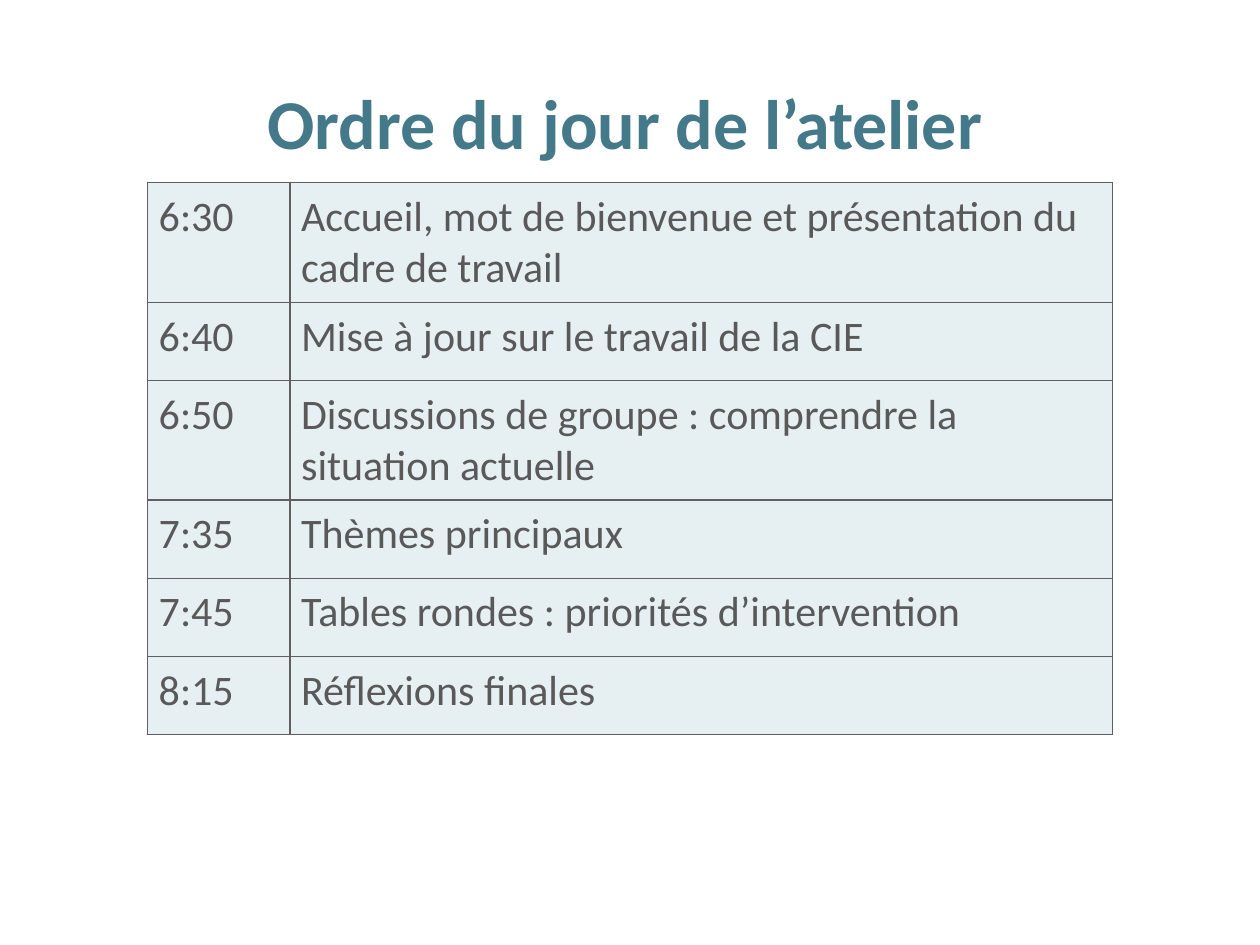
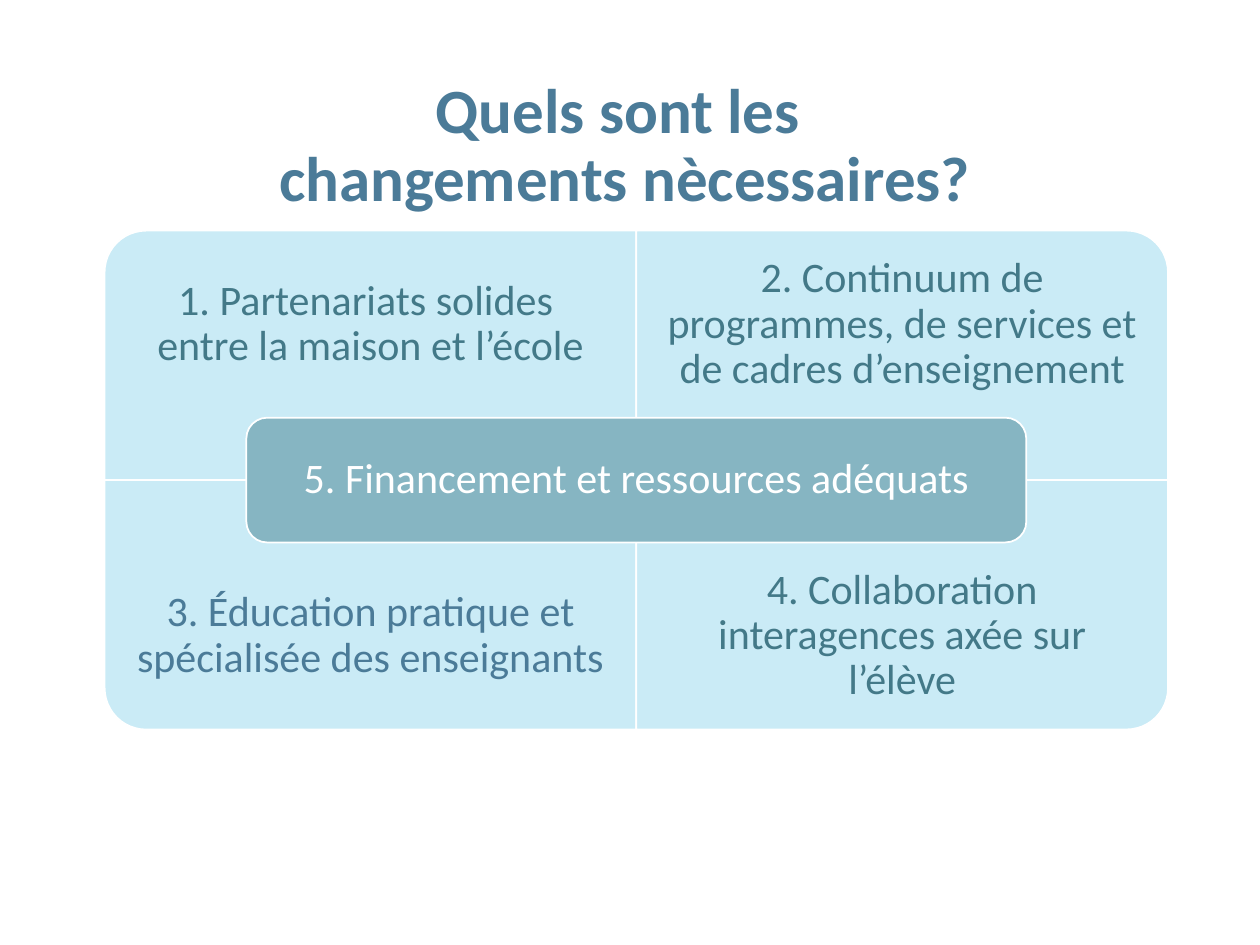
from lxml import etree
from pptx import Presentation
from pptx.dml.color import RGBColor
from pptx.enum.shapes import MSO_SHAPE
from pptx.enum.text import MSO_ANCHOR, PP_ALIGN
from pptx.oxml.ns import qn
from pptx.util import Inches, Pt

CORNER, PILL = MSO_SHAPE.ROUND_1_RECTANGLE, MSO_SHAPE.ROUNDED_RECTANGLE
MIDDLE, CENTER = MSO_ANCHOR.MIDDLE, PP_ALIGN.CENTER

FONT = "Calibri"
SIZE = 24
COLORS = {
    "teal": "437988",
    "blue": "4B7B98",
    "mist": "86B5C2",
    "sky": "A2DCF0",
    "text": "595959",
    "rule": "5F5F5F",
    "white": "FFFFFF",
}

AGENDA = [
    ("6:30", "Accueil, mot de bienvenue et présentation du cadre de travail", 0.95),
    ("6:40", "Mise à jour sur le travail de la CIE", 0.62),
    ("6:50", "Discussions de groupe : comprendre la situation actuelle", 0.95),
    ("7:35", "Thèmes principaux", 0.62),
    ("7:45", "Tables rondes : priorités d’intervention", 0.62),
    ("8:15", "Réflexions finales", 0.62),
]

# Text, colour and turn of each quarter, row by row
QUARTERS = [
    ("1. Partenariats solides \ventre la maison et l’école", "teal", 270),
    ("2. Continuum de programmes, de services et de cadres d’enseignement", "teal", 0),
    ("3. Éducation pratique et spécialisée des enseignants", "blue", 180),
    ("4. Collaboration interagences axée sur l’élève", "teal", 90),
]


def rgb(name):
    return RGBColor.from_string(COLORS[name])


def style(para, size, color, bold=False):
    para.font.name, para.font.size = FONT, Pt(size)
    para.font.bold, para.font.color.rgb = bold, rgb(color)


def paint(fill, color, node=None, alpha=100):
    """Fill solidly; alpha is added to the fill's colour inside node."""
    fill.solid()
    fill.fore_color.rgb = rgb(color)
    if alpha < 100:
        tone = node.find(qn("a:solidFill") + "/" + qn("a:srgbClr"))
        etree.SubElement(tone, qn("a:alpha"), val=str(alpha * 1000))


def write(frame, text, size, color, inset, bold=False):
    frame.word_wrap = True
    frame.vertical_anchor = MIDDLE
    frame.margin_left = frame.margin_right = Inches(inset)
    frame.margin_top = frame.margin_bottom = Inches(inset)
    para = frame.paragraphs[0]
    para.text = text
    para.alignment, para.line_spacing = CENTER, 0.9
    style(para, size, color, bold)


def add_text(slide, box, text, size, color, inset=0.1, bold=False):
    label = slide.shapes.add_textbox(*map(Inches, box))
    write(label.text_frame, text, size, color, inset, bold)


def add_title(slide, text, top, size, color):
    add_text(slide, (0.74, top, 8.44, 1.45), text, size, color, bold=True)


def add_panel(slide, kind, box, color, alpha=100, turn=0):
    left, top, width, height = box
    if turn % 180:  # a quarter turn swaps the sides about the centre
        left, top = left + (width - height) / 2, top + (height - width) / 2
        width, height = height, width
    panel = slide.shapes.add_shape(kind, *map(Inches, (left, top, width, height)))
    panel.shadow.inherit = False
    panel.rotation = turn
    paint(panel.fill, color, panel._element.spPr, alpha)
    panel.line.color.rgb = rgb("white")
    panel.line.width = Pt(1)
    return panel


def add_borders(props):
    for spot, side in enumerate("LRTB"):
        line = etree.Element(qn("a:ln" + side), w=str(Pt(1)))
        fill = etree.SubElement(line, qn("a:solidFill"))
        etree.SubElement(fill, qn("a:srgbClr"), val=COLORS["rule"])
        props.insert(spot, line)


def fill_cell(cell, text):
    props = cell._tc.get_or_add_tcPr()
    paint(cell.fill, "mist", props, 20)
    add_borders(props)
    cell.margin_left = cell.margin_right = Inches(0.09)
    cell.margin_top = cell.margin_bottom = Inches(0.07)
    cell.text = text
    style(cell.text_frame.paragraphs[0], SIZE, "text")


def add_agenda(slide):
    widths = (1.13, 6.53)
    tall = sum(row[2] for row in AGENDA)
    box = map(Inches, (1.17, 1.45, sum(widths), tall))
    table = slide.shapes.add_table(len(AGENDA), len(widths), *box).table
    table.first_row = table.horz_banding = False
    for col, width in zip(table.columns, widths):
        col.width = Inches(width)
    for row, (time, topic, height) in zip(table.rows, AGENDA):
        row.height = Inches(height)
        for cell, text in zip(row.cells, (time, topic)):
            fill_cell(cell, text)


def add_matrix(slide):
    left, top, width, height = 0.83, 1.83, 4.22, 1.98
    depth = 1.49  # text keeps clear of the centre bar
    for num, (text, color, turn) in enumerate(QUARTERS):
        row, col = divmod(num, 2)
        x, y = left + col * width, top + row * height
        add_panel(slide, CORNER, (x, y, width, height), "sky", 56, turn)
        text_top = y + row * (height - depth)
        add_text(slide, (x, text_top, width, depth), text, SIZE, color, 0.19)

    # Centre bar
    wide, high = 6.19, 0.99
    box = (left + width - wide / 2, top + height - high / 2, wide, high)
    bar = add_panel(slide, PILL, box, "mist")
    write(bar.text_frame, "5. Financement et ressources adéquats", SIZE, "white", 0.1)


def main():
    deck = Presentation()
    deck.slide_width, deck.slide_height = Inches(10), Inches(7.5)
    blank = deck.slide_layouts[6]

    # Agenda
    slide = deck.slides.add_slide(blank)
    add_title(slide, "Ordre du jour de l’atelier", 0.28, 40, "teal")
    add_agenda(slide)

    # Changes needed
    slide = deck.slides.add_slide(blank)
    add_matrix(slide)
    add_title(slide, "Quels sont les \vchangements nècessaires?", 0.44, 36, "blue")

    deck.save("out.pptx")


if __name__ == "__main__":
    main()
